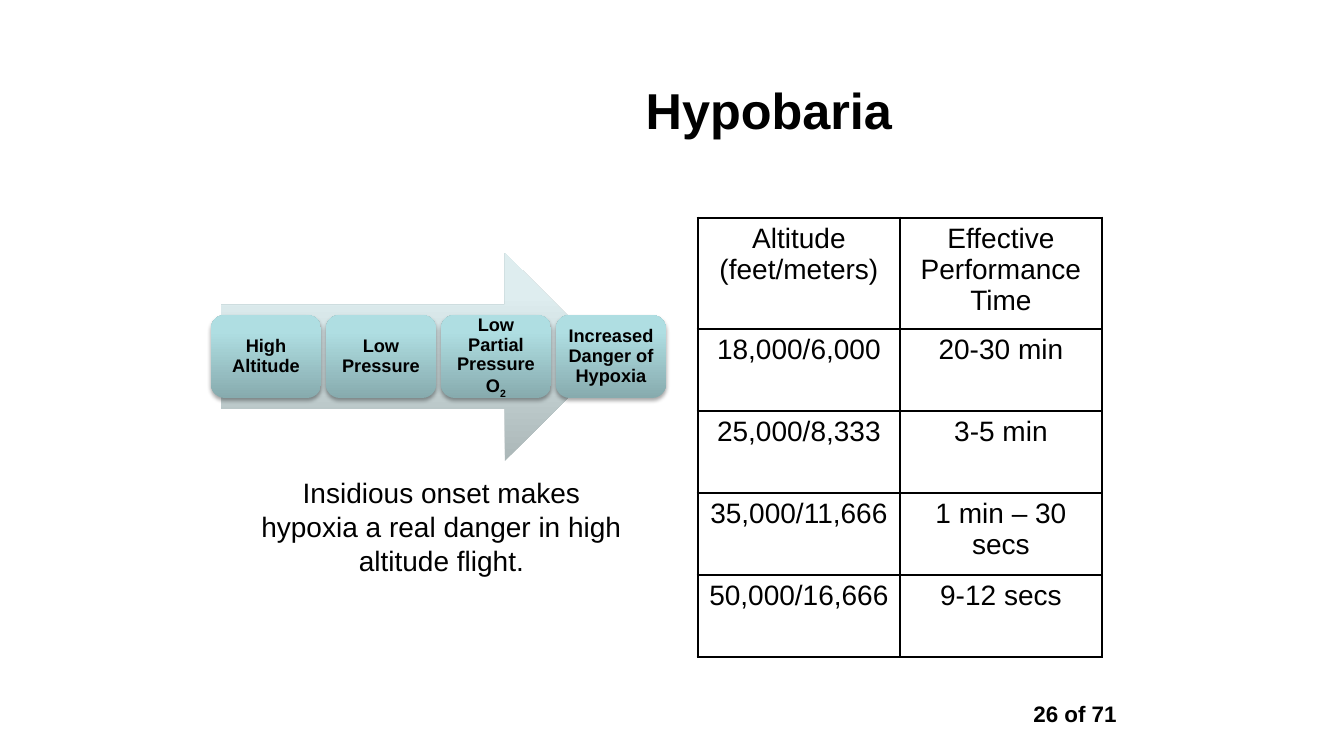
from lxml import etree
from pptx import Presentation
from pptx import util as u
from pptx.dml.color import RGBColor
from pptx.enum import shapes, text
from pptx.oxml.ns import qn

PX = 914400 / 100.8


def px(*lengths):
    """Turn pixel lengths into EMU."""
    return [u.Emu(round(length * PX)) for length in lengths]


def write(frame, runs, size, bold=False, spacing=None, anchor=text.MSO_ANCHOR.TOP):
    """Fill a text frame with one centred paragraph; runs after the first are subscripts."""
    frame.word_wrap = True
    frame.vertical_anchor = anchor
    para = frame.paragraphs[0]
    para.alignment = text.PP_ALIGN.CENTER
    para.line_spacing = spacing
    for index, words in enumerate(runs):
        span = para.add_run()
        span.text = words
        span.font.name = "Arial"
        span.font.size = u.Pt(size)
        span.font.bold = bold
        span.font.color.rgb = RGBColor.from_string("000000")
        if index:
            span.font._element.set("baseline", "-25000")


deck = Presentation()
deck.slide_width, deck.slide_height = px(1344, 756)
page = deck.slides.add_slide(deck.slide_layouts[6])

# Title, caption and page number
title = page.shapes.add_textbox(*px(420, 42, 698, 134))
write(title.text_frame, ["Hypobaria"], 36, True, anchor=text.MSO_ANCHOR.MIDDLE)
caption = page.shapes.add_textbox(*px(244, 471, 395, 141))
write(caption.text_frame,
      ["Insidious onset makes hypoxia a real danger in high altitude flight."], 20)
number = page.shapes.add_textbox(*px(1016, 698, 118, 34))
write(number.text_frame, ["26 of 71"], 16, True, 0.9)

# Altitude table
rows = [
    ("Altitude (feet/meters)", "Effective Performance Time"),
    ("18,000/6,000", "20-30 min"),
    ("25,000/8,333", "3-5 min"),
    ("35,000/11,666", "1 min – 30 secs"),
    ("50,000/16,666", "9-12 secs"),
]
frame = page.shapes.add_table(len(rows), 2, *px(698, 218, 404, 435))
table = frame.table
table.first_row = table.horz_banding = False
for column in table.columns:
    column.width = px(202)[0]
for r, row in enumerate(rows):
    table.rows[r].height = px(82 if r else 107)[0]
    for c, words in enumerate(row):
        cell = table.cell(r, c)
        write(cell.text_frame, [words], 20)
        outer = {"lnL": c == 0, "lnR": c == 1, "lnT": r == 0, "lnB": r == len(rows) - 1}
        properties = cell._tc.get_or_add_tcPr()
        for side, thick in outer.items():
            width = u.Pt(2.25 if thick else 1)
            line = etree.SubElement(properties, qn("a:" + side), w=str(width))
            fill = etree.SubElement(line, qn("a:solidFill"))
            etree.SubElement(fill, qn("a:srgbClr"), val="000000")
        cell.fill.background()

# Arrow with the four steps on it
ARROW_STOPS = [(0, "ABB7B8"), (80, "DEEDEF"), (100, "DFEFF0")]
STEP_STOPS = [(0, "87ABAE"), (80, "AFDEE2"), (100, "AFE0E4")]
steps = [["High Altitude"], ["Low Pressure"], ["Low Partial Pressure O", "2"],
         ["Increased Danger of Hypoxia"]]
KIND = shapes.MSO_SHAPE
parts = [(KIND.RIGHT_ARROW, (221, 253, 388, 208), ARROW_STOPS, None)]
parts += [(KIND.ROUNDED_RECTANGLE, (211 + 115 * i, 315, 110, 83), STEP_STOPS, step)
          for i, step in enumerate(steps)]

for kind, place, stops, words in parts:
    shape = page.shapes.add_shape(kind, *px(*place))
    shape.line.fill.background()
    shape.shadow.inherit = False
    shape.fill.gradient()
    shape.fill.gradient_angle = 90
    outline = shape._element.spPr
    stop_list = outline.find(".//" + qn("a:gsLst"))
    stop_list.clear()
    for position, color in stops:
        stop = etree.SubElement(stop_list, qn("a:gs"), pos=str(position * 1000))
        etree.SubElement(stop, qn("a:srgbClr"), val=color)
    if words:
        shadow = etree.SubElement(outline.find(qn("a:effectLst")), qn("a:outerShdw"),
                                  blurRad=str(u.Pt(3.1)), dist=str(u.Pt(1.8)),
                                  dir="5400000", rotWithShape="0")
        shade = etree.SubElement(shadow, qn("a:srgbClr"), val="000000")
        etree.SubElement(shade, qn("a:alpha"), val="35000")
        label = shape.text_frame
        label.margin_left, label.margin_right, label.margin_top, label.margin_bottom = px(5, 5, 5, 5)
        write(label, words, 13, True, 0.9, text.MSO_ANCHOR.MIDDLE)

deck.save("out.pptx")
